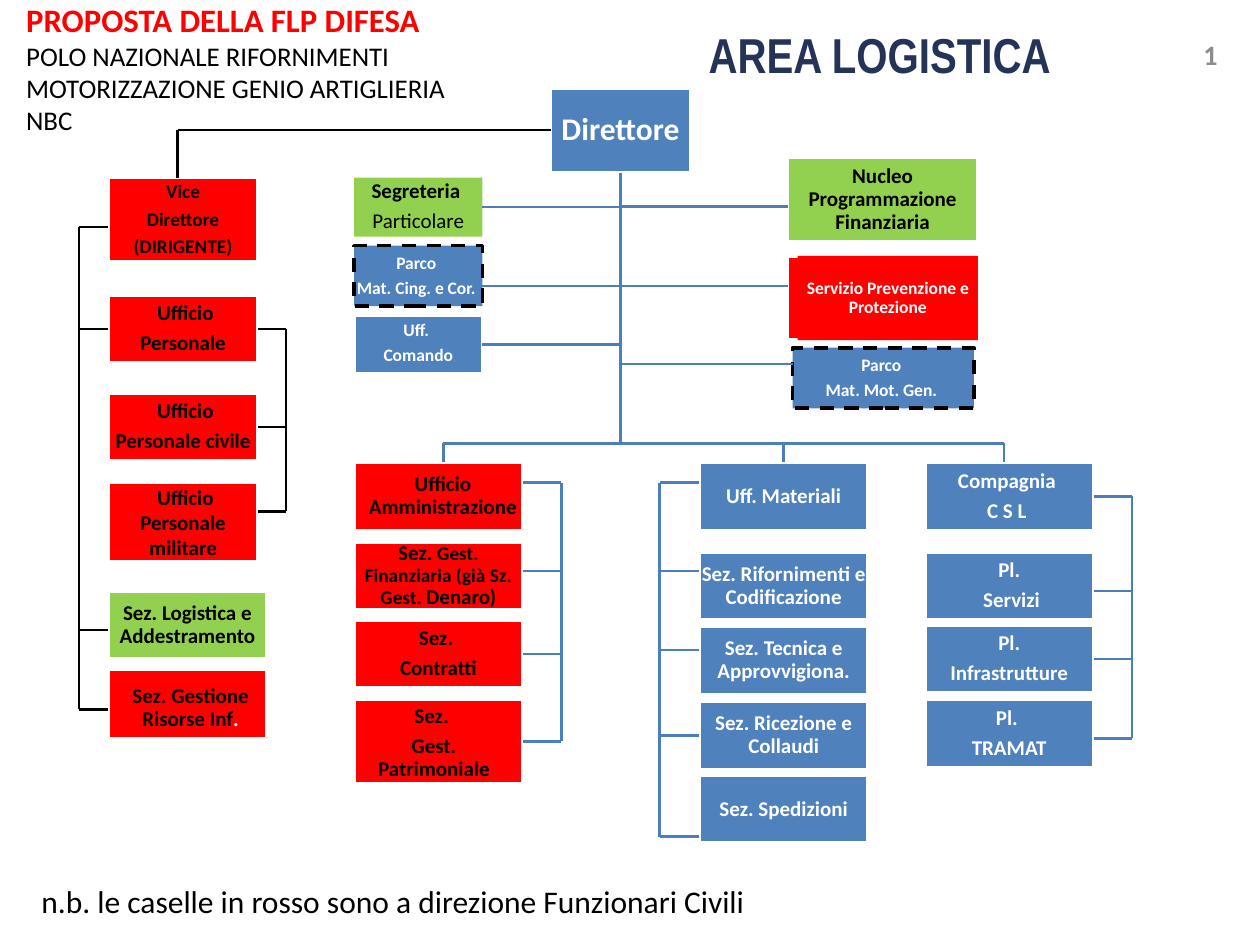
import pptx
import pptx.dml.color
import pptx.enum.dml
import pptx.enum.shapes
import pptx.enum.text
import pptx.oxml
import pptx.oxml.ns
import pptx.util

Pt = pptx.util.Pt
ALIGN = pptx.enum.text.PP_ALIGN
ANCHOR = pptx.enum.text.MSO_ANCHOR

THEME = {
    "red": "FF0000", "green": "92D050", "blue": "4F81BD", "line": "4B7EBC",
    "black": "000000", "white": "FFFFFF", "navy": "253356", "gray": "8C8C8C",
    "body": "Calibri", "title": "Arial Narrow",
    "sizes": {"small": 10, "medium": 11, "normal": 12, "director": 18, "number": 16,
              "heading": 18.7, "subheading": 15.4, "title": 28},
}
# style: fill, text, outline, dashed
STYLES = {
    "civil": ("red", "black", "white", False),
    "alert": ("red", "white", None, False),
    "support": ("green", "black", "white", False),
    "plain support": ("green", "black", None, False),
    "unit": ("blue", "white", "white", False),
    "park": ("blue", "white", "black", True),
}
# column: left, width, boxes of (name, top, height, style, size, lines)
COLUMNS = [
    (314.6, 80, [("director", 50.4, 48.2, "unit", "director", ["Direttore"])]),
    (61.9, 85.5, [
        ("deputy", 101.5, 48.2, "civil", "medium", ["Vice", "Direttore", "(DIRIGENTE)"]),
        ("personnel", 168.5, 38.9, "civil", "normal", [" Ufficio", "Personale"]),
        ("civilians", 224.6, 38.9, "civil", "normal", [" Ufficio", "Personale civile"]),
        ("military", 275.8, 45.4, "civil", "normal", [" Ufficio", "Personale militare"])]),
    (61.9, 90.4, [
        ("logistics", 337.7, 38.9, "support", "normal", ["Sez. Logistica e Addestramento"]),
        ("computing", 382.3, 39.6, "civil", "normal",
         [[("Sez. Gestione Risorse Inf", {}), (".", {"color": "white"})]])]),
    (202.3, 73.4, [
        ("secretary", 101.5, 33.8, "plain support", "normal",
         ["Segreteria ", [("Particolare", {"bold": False})]]),
        ("belt park", 140.4, 34.6, "park", "small", ["Parco ", "Mat. Cing. e Cor. "]),
        ("command", 180, 33.8, "unit", "small", ["Uff. ", "Comando"])]),
    (450, 108.7, [
        ("planning", 90, 48.2, "support", "normal", ["Nucleo Programmazione Finanziaria"]),
        ("safety", 146.2, 48.2, "civil", "small", [])]),
    (455.8, 103, [("safety text", 146.2, 48.2, "alert", "small",
                   ["Servizio Prevenzione e Protezione"])]),
    (452.9, 103.7, [("motor park", 198.7, 34.6, "park", "small", ["Parco ", "Mat. Mot. Gen. "])]),
    (202.3, 96.5, [
        ("administration", 264.2, 38.9, "civil", "normal", ["Ufficio Amministrazione"]),
        ("finance", 309.6, 38.9, "civil", "normal",
         [[("Sez. ", {}), ("Gest. Finanziaria (già Sz. Gest. ", {"size": "medium"}),
           ("Denaro)", {})]]),
        ("contracts", 354.2, 38.9, "civil", "normal", ["Sez. ", "Contratti"]),
        ("assets", 399.6, 48.2, "civil", "normal", ["Sez. ", "Gest. Patrimoniale"])]),
    (399.6, 96.5, [
        ("materials", 264.2, 38.9, "unit", "normal", ["Uff. Materiali"]),
        ("supplies", 315.4, 38.9, "unit", "normal", ["Sez. Rifornimenti e Codificazione"]),
        ("technical", 358, 38.9, "unit", "normal", ["Sez. Tecnica e Approvvigiona."]),
        ("reception", 400.8, 38.9, "unit", "normal", ["Sez. Ricezione e Collaudi"]),
        ("shipping", 443, 38.9, "unit", "normal", ["Sez. Spedizioni"])]),
    (528.5, 96.5, [
        ("company", 264.2, 38.9, "unit", "normal", ["Compagnia ", "C S L "]),
        ("services", 315.4, 38.9, "unit", "normal", ["Pl.", " Servizi"]),
        ("facilities", 357.1, 38.9, "unit", "normal", ["Pl.", "Infrastrutture"]),
        ("transport", 399.6, 38.9, "unit", "normal", ["Pl. ", "TRAMAT"])]),
]
INSETS = {"computing": (3.6, 5.8, 0), "administration": (5.8, 0.7, 0.7),
          "assets": (0.7, 3, 5.8), "command": (7.2, 3.6, 7.2)}  # left, top, right
# bracket: trunk x, colour, draw trunk, branches of (box, y; None joins the side's middle)
BRACKETS = [
    (45, "black", True, [("deputy", 129.6), ("personnel", None), ("logistics", 360),
                         ("computing", 405.4)]),
    (163.4, "black", True, [("personnel", None), ("civilians", None), ("military", 292.3)]),
    (354.6, "line", False, [("secretary", None), ("belt park", 163.4), ("command", None),
                            ("planning", 118.1), ("safety", 163.4), ("motor park", 208.1)]),
    (320.8, "line", True, [("administration", 275.8), ("finance", 326.2), ("contracts", None),
                           ("assets", None)]),
    (376.9, "line", True, [("materials", 275.8), ("supplies", 326.2), ("technical", 371.5),
                           ("reception", None), ("shipping", 478.1)]),
    (646.9, "line", True, [("company", None), ("services", 337.7), ("facilities", None),
                           ("transport", 421.9)]),
]
CROSSBAR = 253.4
DROPS = [("administration", 253.4), ("materials", None), ("company", 573.8)]
DEPUTY_X = 101.5
# label: left, top, width, height, alignment, anchor, lines of (text, size, colour, bold, font)
LABELS = [
    (7.9, 10.8, 278.6, 56.2, ALIGN.LEFT, ANCHOR.MIDDLE, [
        ("PROPOSTA DELLA FLP DIFESA", "heading", "red", True, "body"),
        ("POLO NAZIONALE RIFORNIMENTI MOTORIZZAZIONE GENIO ARTIGLIERIA NBC",
         "subheading", "black", False, "body")]),
    (365.8, 15.8, 273.6, 29.5, ALIGN.CENTER, ANCHOR.MIDDLE,
     [("AREA LOGISTICA", "title", "navy", True, "title")]),
    (641.5, 16.6, 61.2, 28.8, ALIGN.RIGHT, ANCHOR.MIDDLE,
     [("1", "number", "gray", True, "body")]),
    (16.6, 500.4, 444.2, 28.8, ALIGN.LEFT, ANCHOR.TOP,
     [("n.b. le caselle in rosso sono a direzione Funzionari Civili",
       "director", "black", False, "body")]),
]


def rgb(name):
    return pptx.dml.color.RGBColor.from_string(THEME[name])


def style_font(font, size, color, bold, family="body"):
    font.name, font.size, font.bold = THEME[family], Pt(THEME["sizes"][size]), bold
    font.color.rgb = rgb(color)


def next_paragraph(frame, index):
    return frame.add_paragraph() if index else frame.paragraphs[0]


def add_box(slide, name, left, top, width, height, style, size, lines):
    fill, color, outline, dashed = STYLES[style]
    shape = slide.shapes.add_shape(pptx.enum.shapes.MSO_SHAPE.RECTANGLE,
                                   Pt(left), Pt(top), Pt(width), Pt(height))
    shape.shadow.inherit = False
    shape.fill.solid()
    shape.fill.fore_color.rgb = rgb(fill)
    if outline:
        shape.line.color.rgb, shape.line.width = rgb(outline), Pt(2)
    else:
        shape.line.fill.background()
    if dashed:
        shape.line.dash_style = pptx.enum.dml.MSO_LINE.DASH
    frame = shape.text_frame
    frame.word_wrap = True
    frame.vertical_anchor = ANCHOR.TOP if name == "command" else ANCHOR.MIDDLE
    inset_left, inset_top, inset_right = INSETS.get(name, (0.7, 0.7, 0.7))
    frame.margin_left, frame.margin_right = Pt(inset_left), Pt(inset_right)
    frame.margin_top, frame.margin_bottom = Pt(inset_top), Pt(0.7)
    for index, line in enumerate(lines):
        paragraph = next_paragraph(frame, index)
        paragraph.alignment = ALIGN.CENTER
        if name != "military":
            paragraph.line_spacing = 0.9
            paragraph.space_after = Pt(round(0.35 * THEME["sizes"][size], 2))
        style_font(paragraph.font, size, color, True)
        for text, changes in [(line, {})] if isinstance(line, str) else line:
            run = paragraph.add_run()
            run.text = text
            style_font(run.font, changes.get("size", size), changes.get("color", color),
                       changes.get("bold", True))
    return shape


def add_line(slide, start, end, color, begin=None, finish=None):
    connector = slide.shapes.add_connector(pptx.enum.shapes.MSO_CONNECTOR.STRAIGHT,
                                           *(Pt(value) for value in start + end))
    connector.line.color.rgb = rgb(color)
    connector.line.width = Pt(1.25 if color == "black" else 1.5)
    properties = connector._element.spPr
    properties.append(pptx.oxml.parse_xml("<a:effectLst %s/>" % pptx.oxml.ns.nsdecls("a")))
    if begin:
        connector.begin_connect(*begin)
    if finish:
        connector.end_connect(*finish)


def add_bracket(slide, boxes, trunk, color, draw_trunk, branches):
    heights = []
    for name, y in branches:
        box = boxes[name]
        side = 3 if box.left.pt < trunk else 1
        edge = box.left.pt + (box.width.pt if side == 3 else 0)
        joined = (box, side) if y is None else None
        y = box.top.pt + box.height.pt / 2 if y is None else y
        add_line(slide, (edge, y), (trunk, y), color, begin=joined)
        heights.append(y)
    if draw_trunk:
        add_line(slide, (trunk, min(heights)), (trunk, max(heights)), color)


def add_label(slide, left, top, width, height, alignment, anchor, lines):
    frame = slide.shapes.add_textbox(Pt(left), Pt(top), Pt(width), Pt(height)).text_frame
    frame.word_wrap, frame.vertical_anchor = True, anchor
    for index, (text, *look) in enumerate(lines):
        paragraph = next_paragraph(frame, index)
        paragraph.text, paragraph.alignment = text, alignment
        style_font(paragraph.font, *look)


def main():
    """Build the logistics area organisation chart."""
    presentation = pptx.Presentation()
    presentation.slide_width, presentation.slide_height = Pt(720), Pt(540)
    slide = presentation.slides.add_slide(presentation.slide_layouts[6])
    boxes = {}
    for left, width, rows in COLUMNS:
        for name, top, height, *content in rows:
            boxes[name] = add_box(slide, name, left, top, width, height, *content)
    for bracket in BRACKETS:
        add_bracket(slide, boxes, *bracket)

    director = boxes["director"]
    spine = director.left.pt + director.width.pt / 2
    middle = director.top.pt + director.height.pt / 2
    add_line(slide, (spine, 98.6), (spine, CROSSBAR), "line", begin=(director, 2))
    add_line(slide, (DEPUTY_X, middle), (314.6, middle), "black", finish=(director, 1))
    add_line(slide, (DEPUTY_X, middle), (DEPUTY_X, boxes["deputy"].top.pt), "black")
    add_line(slide, (DROPS[0][1], CROSSBAR), (DROPS[-1][1], CROSSBAR), "line")
    for name, x in DROPS:
        box = boxes[name]
        joined = (box, 0) if x is None else None
        x = box.left.pt + box.width.pt / 2 if x is None else x
        add_line(slide, (x, CROSSBAR), (x, box.top.pt), "line", finish=joined)
    for label in LABELS:
        add_label(slide, *label)
    presentation.save("out.pptx")


if __name__ == "__main__":
    main()
